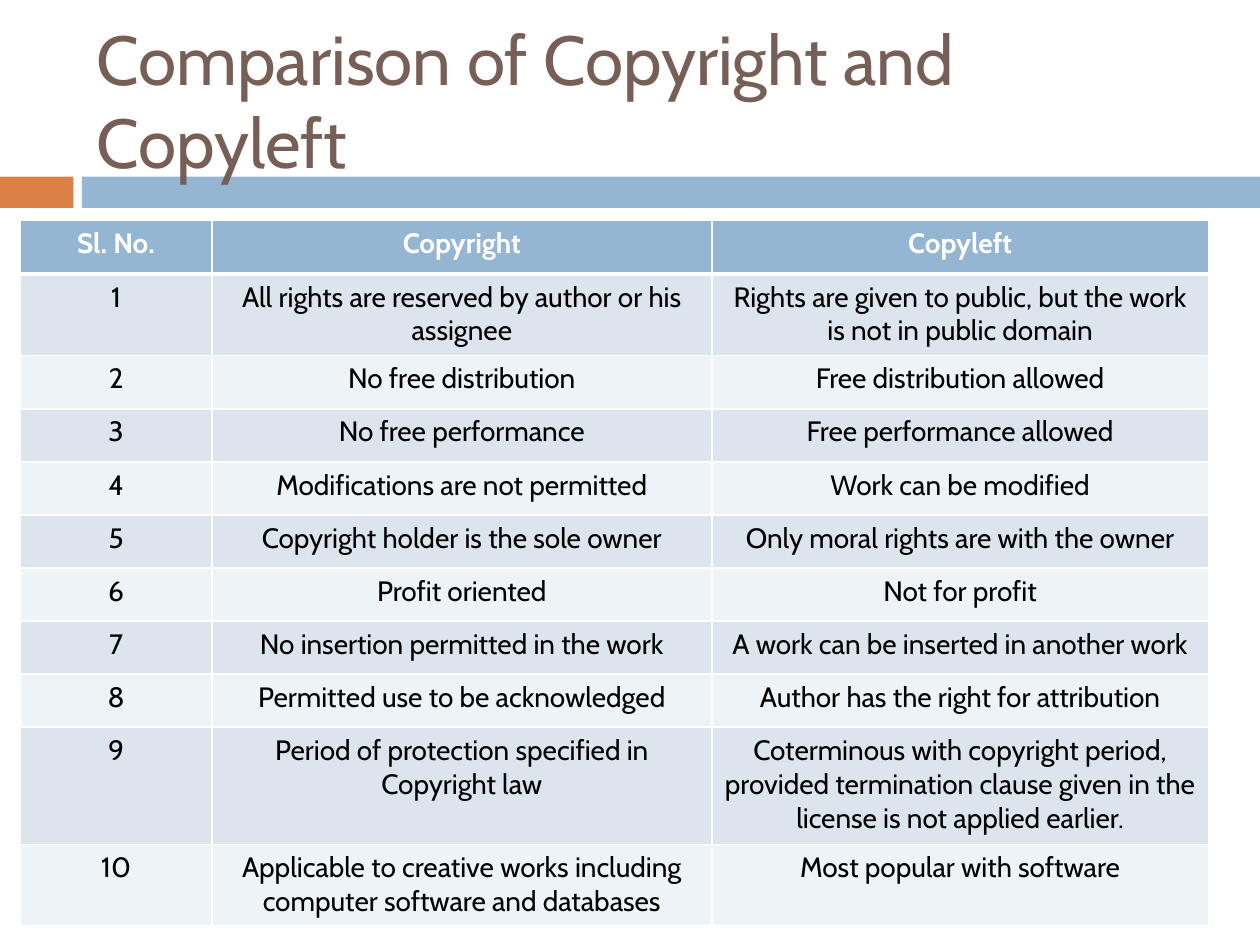
from lxml import etree
from pptx import Presentation
from pptx.dml.color import RGBColor
from pptx.enum import shapes, text
from pptx.oxml import ns
from pptx.util import Cm, Pt


def rgb(hex_color):
    return RGBColor.from_string(hex_color)


def add_border(cell, side, width):
    ln = etree.SubElement(cell._tc.get_or_add_tcPr(), ns.qn("a:ln" + side), w=str(Pt(width)))
    fill = etree.SubElement(ln, ns.qn("a:solidFill"))
    etree.SubElement(fill, ns.qn("a:srgbClr"), val="FFFFFF")


prs = Presentation()
prs.slide_width, prs.slide_height = Cm(25.4), Cm(19.05)
s = prs.slides.add_slide(prs.slide_layouts[6])

# Accent bars under the title
for left, width, color in [(0, 1.48, "DD8047"), (1.65, 23.75, "94B6D2")]:
    sp = s.shapes.add_shape(shapes.MSO_SHAPE.RECTANGLE, Cm(left), Cm(3.56), Cm(width), Cm(0.63))
    sp.shadow.inherit = False
    sp.fill.solid()
    sp.fill.fore_color.rgb = rgb(color)
    sp.line.fill.background()

# Title
tf = s.shapes.add_textbox(Cm(1.7), Cm(0.64), Cm(22.66), Cm(2.74)).text_frame
tf.word_wrap = True
tf.vertical_anchor = text.MSO_ANCHOR.MIDDLE
p = tf.paragraphs[0]
p.text = "Comparison of Copyright and Copyleft"
p.font.name, p.font.size = "Cabin", Pt(39.6)
p.font.color.rgb = rgb("775F55")

# Comparison table: the first column is numbered by row
rows = [
    ("Copyright", "Copyleft"),
    ("All rights are reserved by author or his assignee",
     "Rights are given to public, but the work is not in public domain"),
    ("No free distribution", "Free distribution allowed"),
    ("No free performance", "Free performance allowed"),
    ("Modifications are not permitted", "Work can be modified"),
    ("Copyright holder is the sole owner", "Only moral rights are with the owner"),
    ("Profit oriented", "Not for profit"),
    ("No insertion permitted in the work", "A work can be inserted in another work"),
    ("Permitted use to be acknowledged", "Author has the right for attribution"),
    ("Period of protection specified in Copyright law",
     "Coterminous with copyright period, provided termination clause given in the "
     "license is not applied earlier."),
    ("Applicable to creative works including computer software and databases",
     "Most popular with software"),
]
widths = [3.86, 10.08, 10.01]
tall_rows = {1: 1.65, 9: 2.36, 10: 1.65}
heights = [tall_rows.get(i, 1.07) for i in range(len(rows))]

table = s.shapes.add_table(len(rows), len(widths), Cm(0.41), Cm(4.45),
                           Cm(sum(widths)), Cm(sum(heights))).table
for col, width in zip(table.columns, widths):
    col.width = Cm(width)

for i, row in enumerate(rows):
    table.rows[i].height = Cm(heights[i])
    header = i == 0
    fill = "94B6D2" if header else "DCE5EE" if i % 2 else "EEF3F7"
    for j, value in enumerate(("Sl. No." if header else str(i),) + row):
        cell = table.cell(i, j)
        for side in "LRTB":
            thick = (header and side == "B") or (i == 1 and side == "T")
            add_border(cell, side, 3 if thick else 1)
        cell.fill.solid()
        cell.fill.fore_color.rgb = rgb(fill)
        p = cell.text_frame.paragraphs[0]
        p.text = value
        p.alignment = text.PP_ALIGN.CENTER
        p.font.name, p.font.size, p.font.bold = "Cabin", Pt(16), header
        p.font.color.rgb = rgb("FFFFFF" if header else "000000")

prs.save("out.pptx")
